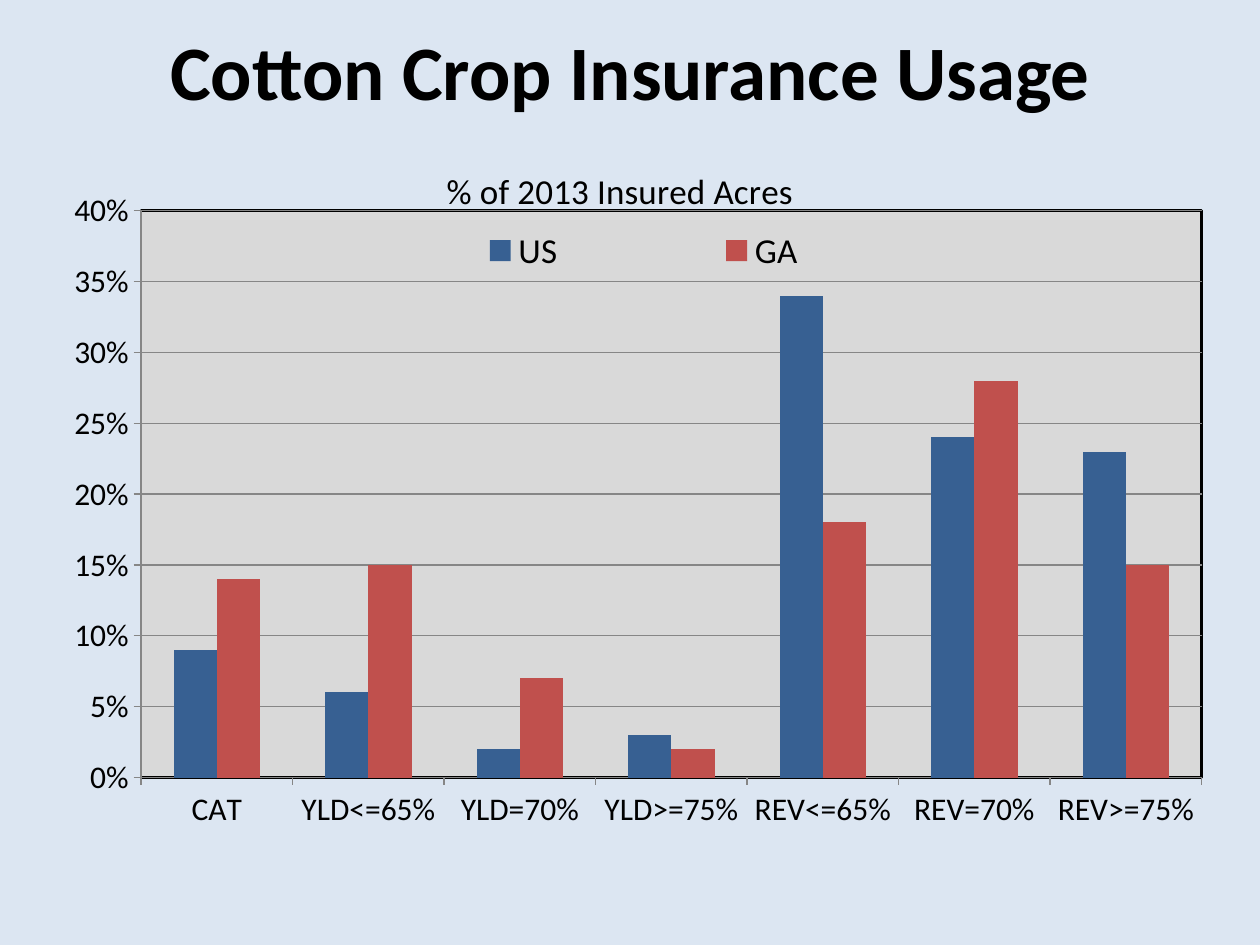
from dataclasses import dataclass

from lxml.etree import _Element
from pptx import Presentation
from pptx.chart.data import CategoryChartData
from pptx.dml.color import RGBColor
from pptx.enum.chart import XL_CHART_TYPE, XL_LEGEND_POSITION, XL_TICK_MARK
from pptx.enum.text import MSO_ANCHOR, PP_ALIGN
from pptx.oxml import parse_xml
from pptx.oxml.ns import nsdecls, qn
from pptx.util import Inches, Pt

BACKGROUND = RGBColor(0xDC, 0xE6, 0xF2)
PLOT = RGBColor(0xD9, 0xD9, 0xD9)
GRID = RGBColor(0x86, 0x86, 0x86)
BLACK = RGBColor(0x00, 0x00, 0x00)
BLUE = RGBColor(0x37, 0x60, 0x92)
RED = RGBColor(0xC0, 0x50, 0x4D)
FONT = "Calibri"


@dataclass(frozen=True)
class Region:
    name: str
    shares: tuple[float, ...]
    color: RGBColor


CATEGORIES = ("CAT", "YLD<=65%", "YLD=70%", "YLD>=75%",
              "REV<=65%", "REV=70%", "REV>=75%")
REGIONS = (
    Region("US", (0.09, 0.06, 0.02, 0.03, 0.34, 0.24, 0.23), BLUE),
    Region("GA", (0.14, 0.15, 0.07, 0.02, 0.18, 0.28, 0.15), RED),
)


def set_layout(parent: _Element, index: int, x: float, y: float,
               w: float = 0, h: float = 0, inner: bool = False) -> None:
    for old in parent.findall(qn("c:layout")):
        parent.remove(old)
    target = '<c:layoutTarget val="inner"/>' if inner else ""
    modes = '<c:xMode val="edge"/><c:yMode val="edge"/>'
    sizes = f'<c:w val="{w}"/><c:h val="{h}"/>' if w else ""
    parent.insert(index, parse_xml(
        f'<c:layout {nsdecls("c")}><c:manualLayout>{target}{modes}'
        f'<c:x val="{x}"/><c:y val="{y}"/>{sizes}</c:manualLayout></c:layout>'))


def add_title(s, text: str) -> None:
    tf = s.shapes.add_textbox(Inches(0.17), Inches(0.08),
                              Inches(9.67), Inches(0.95)).text_frame
    tf.word_wrap = True
    tf.vertical_anchor = MSO_ANCHOR.MIDDLE
    p = tf.paragraphs[0]
    p.alignment = PP_ALIGN.CENTER
    r = p.add_run()
    r.text = text
    r.font.name, r.font.size, r.font.bold = FONT, Pt(44), True
    r.font.color.rgb = BLACK


def add_usage_chart(s, title: str) -> None:
    data = CategoryChartData(number_format="0%")
    data.categories = CATEGORIES
    for region in REGIONS:
        data.add_series(region.name, region.shares)
    chart = s.shapes.add_chart(XL_CHART_TYPE.COLUMN_CLUSTERED, Inches(0.17),
                               Inches(1.03), Inches(9.5), Inches(6), data).chart
    chart.font.name, chart.font.size = FONT, Pt(18)
    chart.font.color.rgb = BLACK

    plot = chart.plots[0]
    plot.gap_width, plot.overlap, plot.vary_by_categories = 150, 0, False
    for series, region in zip(plot.series, REGIONS):
        series.format.fill.solid()
        series.format.fill.fore_color.rgb = region.color

    for axis in (chart.category_axis, chart.value_axis):
        axis.major_tick_mark = XL_TICK_MARK.OUTSIDE
        axis.minor_tick_mark = XL_TICK_MARK.NONE
        axis.tick_labels.font.size = Pt(18)
        axis.format.line.color.rgb = GRID
    axis = chart.value_axis
    axis.minimum_scale, axis.maximum_scale, axis.major_unit = 0, 0.4, 0.05
    axis.tick_labels.number_format = "0%"
    axis.tick_labels.number_format_is_linked = False
    axis.major_gridlines.format.line.color.rgb = GRID

    chart.has_title = True
    p = chart.chart_title.text_frame.paragraphs[0]
    r = p.add_run()
    r.text = title
    r.font.name, r.font.size, r.font.bold = FONT, Pt(20), False
    r.font.color.rgb = BLACK

    chart.has_legend = True
    legend = chart.legend
    legend.position = XL_LEGEND_POSITION.RIGHT
    legend.include_in_layout = True
    legend.font.name, legend.font.size = FONT, Pt(20)
    legend.font.color.rgb = BLACK

    root = chart.element
    area = root.find(".//" + qn("c:plotArea"))
    heading = root.find(".//" + qn("c:title"))
    set_layout(area, 0, 0.1, 0.107, 0.886, 0.75, inner=True)
    set_layout(heading, 1, 0.35, 0.04)
    set_layout(root.find(".//" + qn("c:legend")), 1, 0.26, 0.12, 0.52, 0.08)
    heading.find(qn("c:overlay")).set("val", "1")
    area.append(parse_xml(
        f'<c:spPr {nsdecls("c", "a")}>'
        f'<a:solidFill><a:srgbClr val="{PLOT}"/></a:solidFill>'
        f'<a:ln w="{Pt(1.5)}"><a:solidFill><a:srgbClr val="{BLACK}"/>'
        '</a:solidFill></a:ln></c:spPr>'))


def main() -> None:
    prs = Presentation()
    prs.slide_width, prs.slide_height = Inches(10), Inches(7.5)
    s = prs.slides.add_slide(prs.slide_layouts[6])
    s.background.fill.solid()
    s.background.fill.fore_color.rgb = BACKGROUND
    add_title(s, "Cotton Crop Insurance Usage")
    add_usage_chart(s, "% of 2013 Insured Acres")
    prs.save("out.pptx")


if __name__ == "__main__":
    main()
